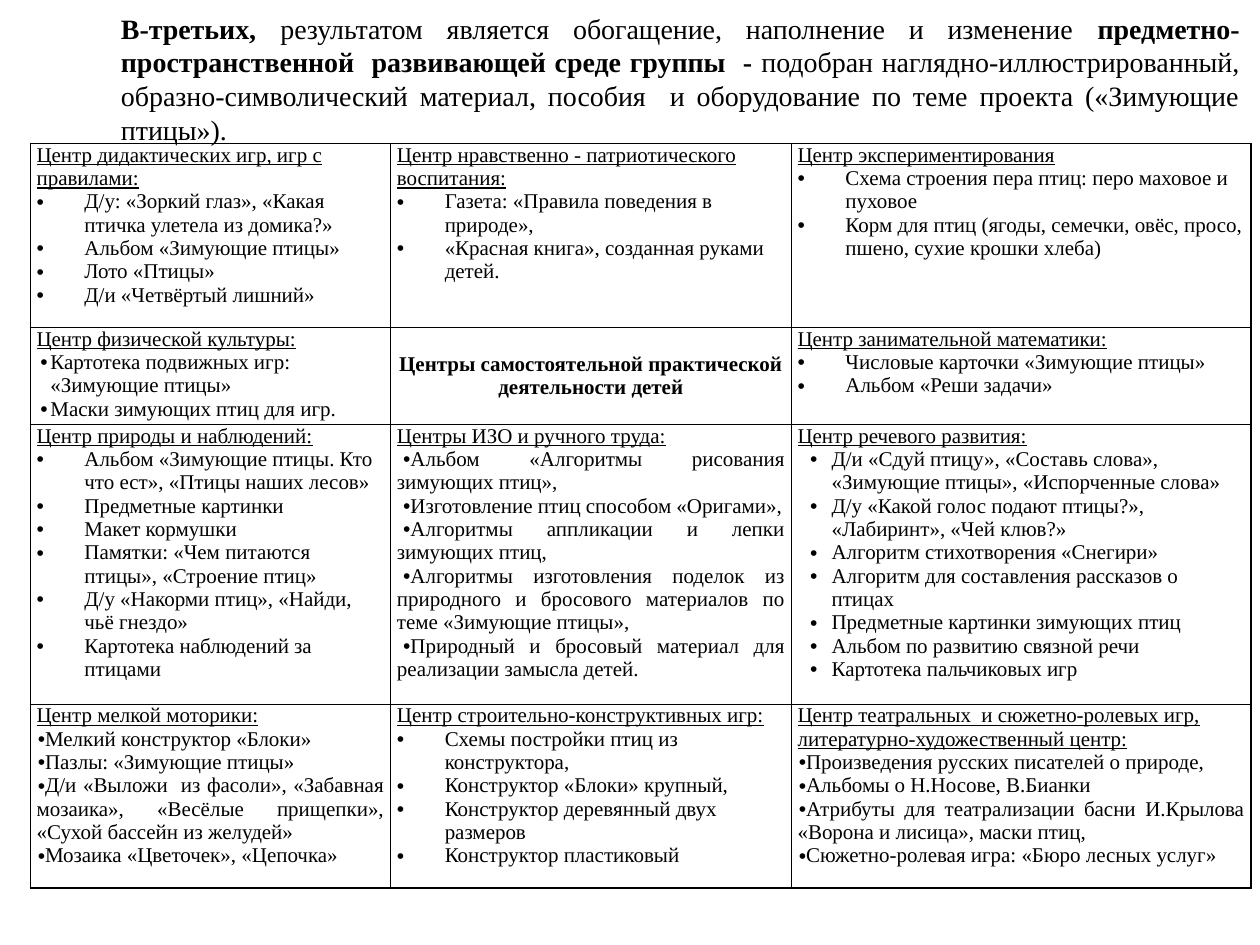
from dataclasses import dataclass
from typing import Optional

from lxml import etree
from pptx import Presentation
from pptx.dml.color import RGBColor
from pptx.enum.text import MSO_ANCHOR, MSO_AUTO_SIZE, PP_ALIGN
from pptx.oxml.ns import qn
from pptx.util import Inches, Length, Pt

LEFT, CENTER, JUSTIFY = PP_ALIGN.LEFT, PP_ALIGN.CENTER, PP_ALIGN.JUSTIFY
TOP, MIDDLE = MSO_ANCHOR.TOP, MSO_ANCHOR.MIDDLE
NO_AUTOFIT = MSO_AUTO_SIZE.NONE
TITLE_ONLY = 5


@dataclass(frozen=True)
class Theme:
    ink: RGBColor = RGBColor(0, 0, 0)
    paper: RGBColor = RGBColor(255, 255, 255)
    font: str = "Times New Roman"
    bullet_font: str = "Arial"
    title_size: Length = Pt(16)
    cell_size: Length = Pt(12)
    border: Length = Pt(1)


@dataclass(frozen=True)
class BulletStyle:
    margin: Length
    indent: Length
    align: PP_ALIGN = LEFT


@dataclass(frozen=True)
class Center:
    heading: str
    bullets: Optional[BulletStyle] = None
    items: tuple[str, ...] = ()


THEME = Theme()
WIDE = BulletStyle(Inches(0.38), Inches(-0.38))
MEDIUM = BulletStyle(Inches(0.27), Inches(-0.17))
NARROW = BulletStyle(Inches(0.11), Inches(-0.08))
INLINE = BulletStyle(Inches(0), Inches(0.05), JUSTIFY)
TIGHT = BulletStyle(Inches(0), Inches(0.01), JUSTIFY)

COLUMN_WIDTHS = [Inches(w) for w in (2.86, 3.18, 3.65)]
ROW_HEIGHTS = [Inches(h) for h in (1.46, 0.77, 2.22, 1.46)]

TITLE_PARTS = (
    ("В-третьих, ", True),
    ("результатом является обогащение, наполнение и изменение ", False),
    ("предметно-пространственной  развивающей среде группы  - ", True),
    ("подобран наглядно-иллюстрированный, образно-символический материал, "
     "пособия  и оборудование по теме проекта («Зимующие птицы»).", False),
)

CENTERS = (
    (
        Center("Центр дидактических игр, игр с правилами:", WIDE, (
            "Д/у: «Зоркий глаз», «Какая птичка улетела из домика?»",
            "Альбом «Зимующие птицы»",
            "Лото «Птицы»",
            "Д/и «Четвёртый лишний»")),
        Center("Центр нравственно - патриотического воспитания:", WIDE, (
            "Газета: «Правила поведения в природе»,",
            "«Красная книга», созданная руками детей.")),
        Center("Центр экспериментирования", WIDE, (
            "Схема строения пера птиц: перо маховое и пуховое",
            "Корм для птиц (ягоды, семечки, овёс, просо, пшено, сухие крошки хлеба)")),
    ),
    (
        Center("Центр физической культуры:", NARROW, (
            "Картотека подвижных игр: «Зимующие птицы»",
            "Маски зимующих птиц для игр.")),
        Center("Центры самостоятельной практической деятельности детей"),
        Center("Центр занимательной математики:", WIDE, (
            "Числовые карточки «Зимующие птицы»",
            "Альбом «Реши задачи»")),
    ),
    (
        Center("Центр природы и наблюдений:", WIDE, (
            "Альбом «Зимующие птицы. Кто что ест», «Птицы наших лесов»",
            "Предметные картинки",
            "Макет кормушки",
            "Памятки: «Чем питаются птицы», «Строение птиц»",
            "Д/у «Накорми птиц», «Найди, чьё гнездо»",
            "Картотека наблюдений за птицами")),
        Center("Центры ИЗО и ручного труда:", INLINE, (
            "Альбом «Алгоритмы рисования зимующих птиц»,",
            "Изготовление птиц способом «Оригами»,",
            "Алгоритмы аппликации и лепки зимующих птиц,",
            "Алгоритмы изготовления поделок из природного и бросового "
            "материалов по теме «Зимующие птицы»,",
            "Природный и бросовый материал для реализации замысла детей.")),
        Center("Центр речевого развития:", MEDIUM, (
            "Д/и «Сдуй птицу», «Составь слова», «Зимующие птицы», «Испорченные слова»",
            "Д/у «Какой голос подают птицы?», «Лабиринт», «Чей клюв?»",
            "Алгоритм стихотворения «Снегири»",
            "Алгоритм для составления рассказов о птицах",
            "Предметные картинки зимующих птиц",
            "Альбом по развитию связной речи",
            "Картотека пальчиковых игр")),
    ),
    (
        Center("Центр мелкой моторики:", TIGHT, (
            "Мелкий конструктор «Блоки»",
            "Пазлы: «Зимующие птицы»",
            "Д/и «Выложи  из фасоли», «Забавная мозаика», «Весёлые прищепки», "
            "«Сухой бассейн из желудей»",
            "Мозаика «Цветочек», «Цепочка»")),
        Center("Центр строительно-конструктивных игр:", WIDE, (
            "Схемы постройки птиц из конструктора,",
            "Конструктор «Блоки» крупный,",
            "Конструктор деревянный двух размеров",
            "Конструктор пластиковый")),
        Center("Центр театральных  и сюжетно-ролевых игр, "
               "литературно-художественный центр:", TIGHT, (
                   "Произведения русских писателей о природе,",
                   "Альбомы о Н.Носове, В.Бианки",
                   "Атрибуты для театрализации басни И.Крылова «Ворона и лисица», маски птиц,",
                   "Сюжетно-ролевая игра: «Бюро лесных услуг»")),
    ),
)


def apply_format(target, values: dict) -> None:
    for name, value in values.items():
        setattr(target, name, value)


def add_run(paragraph, text: str, size: Length, bold=False, underline=False) -> None:
    run = paragraph.add_run()
    run.text = text
    apply_format(run.font, {"name": THEME.font, "size": size,
                            "bold": bold, "underline": underline})
    run.font.color.rgb = THEME.ink


def set_bullet(paragraph, style: BulletStyle) -> None:
    properties = paragraph._p.get_or_add_pPr()
    properties.set("marL", str(style.margin))
    properties.set("indent", str(style.indent))
    etree.SubElement(properties, qn("a:buFont"), typeface=THEME.bullet_font)
    etree.SubElement(properties, qn("a:buChar"), char="•")
    paragraph.alignment = style.align


def set_borders(cell) -> None:
    properties = cell._tc.get_or_add_tcPr()
    for side in ("a:lnL", "a:lnR", "a:lnT", "a:lnB"):
        line = etree.SubElement(properties, qn(side), w=str(THEME.border))
        fill = etree.SubElement(line, qn("a:solidFill"))
        etree.SubElement(fill, qn("a:srgbClr"), val=str(THEME.ink))


def fill_cell(cell, center: Center) -> None:
    """A center without bullets is the bold caption in the middle of the grid."""
    is_caption = center.bullets is None
    set_borders(cell)
    cell.fill.solid()
    cell.fill.fore_color.rgb = THEME.paper
    apply_format(cell, {"margin_left": Inches(0.05), "margin_right": Inches(0.05),
                        "margin_top": 0, "margin_bottom": 0,
                        "vertical_anchor": MIDDLE if is_caption else TOP})
    heading = cell.text_frame.paragraphs[0]
    heading.alignment = CENTER if is_caption else LEFT
    add_run(heading, center.heading, THEME.cell_size,
            bold=is_caption, underline=not is_caption)
    for item in center.items:
        paragraph = cell.text_frame.add_paragraph()
        set_bullet(paragraph, center.bullets)
        add_run(paragraph, item, THEME.cell_size)


def add_centers_table(slide) -> None:
    table = slide.shapes.add_table(
        len(ROW_HEIGHTS), len(COLUMN_WIDTHS), Inches(0.24), Inches(1.14),
        sum(COLUMN_WIDTHS), sum(ROW_HEIGHTS)).table
    apply_format(table, {"first_row": False, "horz_banding": False})
    for column, width in zip(table.columns, COLUMN_WIDTHS):
        column.width = width
    for row, height, centers in zip(table.rows, ROW_HEIGHTS, CENTERS):
        row.height = height
        for cell, center in zip(row.cells, centers):
            fill_cell(cell, center)


def place_title(slide) -> None:
    """Fill the title and bring it in front of the table, which it overlaps."""
    title = slide.shapes.title
    apply_format(title, {"left": Inches(0.86), "top": Inches(0.04),
                         "width": Inches(9.08), "height": Inches(1.45)})
    apply_format(title.text_frame, {"word_wrap": True, "auto_size": NO_AUTOFIT,
                                    "vertical_anchor": TOP})
    paragraph = title.text_frame.paragraphs[0]
    paragraph.alignment = JUSTIFY
    for text, bold in TITLE_PARTS:
        add_run(paragraph, text, THEME.title_size, bold=bold)
    slide.shapes._spTree.append(title._element)


def main() -> None:
    presentation = Presentation()
    apply_format(presentation, {"slide_width": Inches(10), "slide_height": Inches(7.5)})
    slide = presentation.slides.add_slide(presentation.slide_layouts[TITLE_ONLY])
    add_centers_table(slide)
    place_title(slide)
    presentation.save("out.pptx")


if __name__ == "__main__":
    main()
